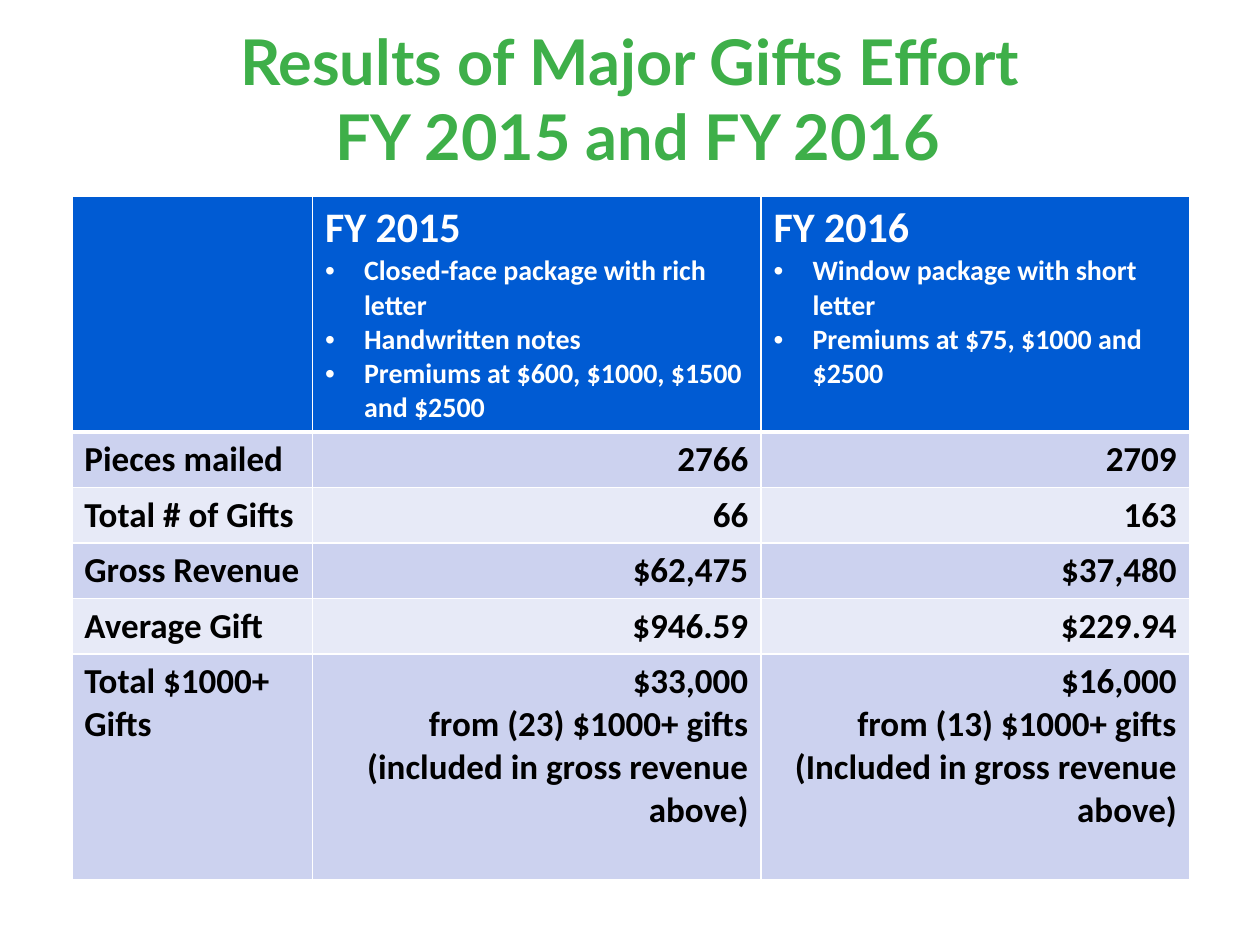
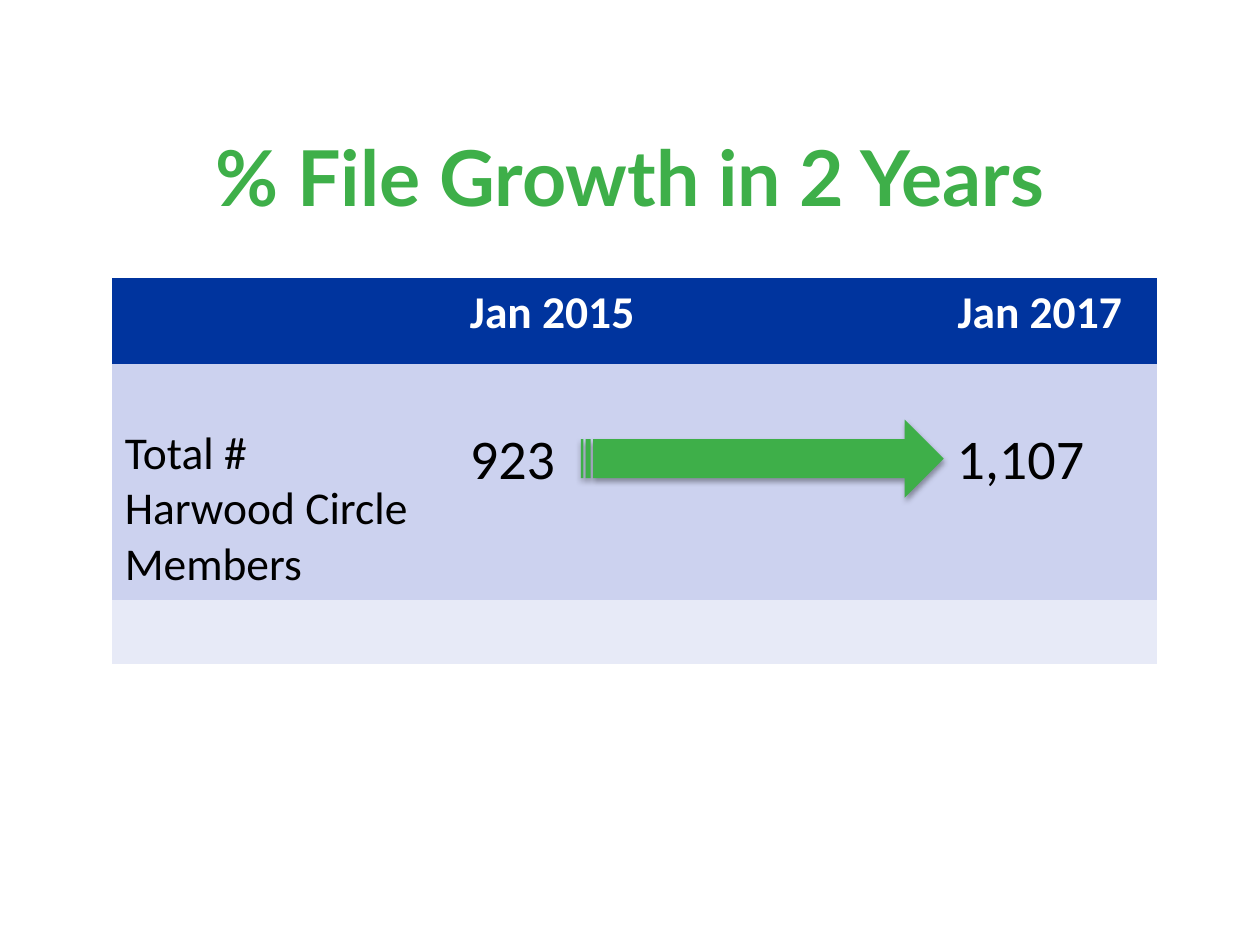
from pptx import Presentation
from pptx.dml.color import RGBColor
from pptx.enum.shapes import MSO_SHAPE
from pptx.enum.text import MSO_ANCHOR, PP_ALIGN
from pptx.oxml.ns import qn
from pptx.util import Inches, Pt
from lxml import etree

LEFT, CENTER, RIGHT = PP_ALIGN.LEFT, PP_ALIGN.CENTER, PP_ALIGN.RIGHT
MIDDLE = MSO_ANCHOR.MIDDLE
STRIPED_ARROW = MSO_SHAPE.STRIPED_RIGHT_ARROW
TITLE_ONLY = 5

# Shared look
GREEN, WHITE, BLACK = "3EAF49", "FFFFFF", "000000"
BRIGHT_BLUE, NAVY = "005BD3", "00349E"
BANDS = ("CCD2EF", "E7EAF7")
TITLE_FONT, BODY_FONT = "Lato", "Calibri"


def rgb(value):
    return RGBColor.from_string(value)


def add_span(para, text, size, color, bold=True, font=BODY_FONT):
    span = para.add_run()
    span.text = text
    span.font.size = Pt(size)
    span.font.name = font
    span.font.bold = bold
    span.font.color.rgb = rgb(color)


def write_cell(cell, lines, size, color, bold=True, align=LEFT):
    """Write one paragraph per line and return the paragraphs."""
    frame = cell.text_frame
    paras = [frame.paragraphs[0]] + [frame.add_paragraph() for _ in lines[1:]]
    for para, line in zip(paras, lines):
        para.alignment = align
        add_span(para, line, size, color, bold)
    return paras


def add_bullet(para, indent=0.31):
    props = para._p.get_or_add_pPr()
    props.set("marL", str(Inches(indent)))
    props.set("indent", str(-Inches(indent)))
    etree.SubElement(props, qn("a:buFont"), typeface="Arial")
    etree.SubElement(props, qn("a:buChar"), char="•")


def set_border(cell, side, width, color):
    """Draw one cell edge; a width of 0 leaves it clear."""
    line = etree.SubElement(cell._tc.get_or_add_tcPr(), qn(f"a:ln{side}"), w=str(Pt(width)))
    if width:
        fill = etree.SubElement(line, qn("a:solidFill"))
        etree.SubElement(fill, qn("a:srgbClr"), val=color)
    else:
        etree.SubElement(line, qn("a:noFill"))


def add_title(page, box, lines, size):
    title = page.shapes.title
    title.left, title.top, title.width, title.height = map(Inches, box)
    title.text_frame.vertical_anchor = MIDDLE
    title.text_frame.word_wrap = True
    para = title.text_frame.paragraphs[0]
    para.alignment = CENTER
    for index, line in enumerate(lines):
        if index:
            para.add_line_break()
        add_span(para, line, size, GREEN, font=TITLE_FONT)


def add_banded_table(page, left, top, widths, heights, header_color, grid=0, header_rule=0):
    """Add a table with a coloured header row over alternating bands."""
    frame = page.shapes.add_table(len(heights), len(widths), Inches(left), Inches(top),
                                  Inches(sum(widths)), Inches(sum(heights)))
    table = frame.table
    table.first_row = table.horz_banding = False
    for column, width in zip(table.columns, widths):
        column.width = Inches(width)
    for index, (row, height) in enumerate(zip(table.rows, heights)):
        row.height = Inches(height)
        edges = {"L": grid, "R": grid,
                 "T": header_rule if index == 1 else grid,
                 "B": header_rule if index == 0 else grid}
        for cell in row.cells:
            for side, width in edges.items():
                set_border(cell, side, width, WHITE)
            cell.fill.solid()
            cell.fill.fore_color.rgb = rgb(BANDS[(index - 1) % 2] if index else header_color)
    return table


# Slide 1: yearly results
YEARS = (
    ("FY 2015", "Closed-face package with rich letter", "Handwritten notes",
     "Premiums at $600, $1000, $1500 and $2500"),
    ("FY 2016", "Window package with short letter", "Premiums at $75, $1000 and $2500"),
)
RESULTS = (
    ("Pieces mailed", ["2766"], ["2709"]),
    ("Total # of Gifts", ["66"], ["163"]),
    ("Gross Revenue", ["$62,475"], ["$37,480"]),
    ("Average Gift", ["$946.59"], ["$229.94"]),
    ("Total $1000+ Gifts",
     ["$33,000", "from (23) $1000+ gifts (included in gross revenue above)"],
     ["$16,000", "from (13) $1000+ gifts (Included in gross revenue above)"]),
)


def add_results_table(page, left, top):
    heights = [1.87] + [0.44] * 4 + [1.79]
    table = add_banded_table(page, left, top, [1.91, 3.56, 3.4], heights,
                             BRIGHT_BLUE, grid=1, header_rule=3)
    for column, (year, *features) in enumerate(YEARS, 1):
        cell = table.cell(0, column)
        write_cell(cell, [year], 24, WHITE)
        for feature in features:
            para = cell.text_frame.add_paragraph()
            add_bullet(para)
            add_span(para, feature, 16, WHITE)
    for row, (label, *values) in enumerate(RESULTS, 1):
        write_cell(table.cell(row, 0), [label], 20, BLACK)
        for column, lines in enumerate(values, 1):
            write_cell(table.cell(row, column), lines, 20, BLACK, align=RIGHT)


def build_results(page):
    add_title(page, (0.5, 0.15, 9, 1.25),
              ["Results of Major Gifts Effort", " FY 2015 and FY 2016"], 36)
    add_results_table(page, 0.57, 1.56)


# Slide 2: member growth
def add_growth_table(page, left, top):
    table = add_banded_table(page, left, top, [2.74, 3.39, 2.16], [0.68, 1.87, 0.51], NAVY)
    write_cell(table.cell(0, 1), ["Jan 2015"], 26, WHITE)
    write_cell(table.cell(0, 2), ["Jan 2017"], 26, WHITE)
    table.cell(0, 2).margin_left = Inches(0.58)
    write_cell(table.cell(1, 0), ["Total #", "Harwood Circle Members"], 26, BLACK, bold=False)
    write_cell(table.cell(1, 1), ["923"], 32, BLACK, bold=False)
    write_cell(table.cell(1, 2), ["1,107"], 32, BLACK, bold=False, align=CENTER)
    for column in range(3):
        table.cell(1, column).margin_top = Inches(0.49)


def add_growth_arrow(page, box):
    arrow = page.shapes.add_shape(STRIPED_ARROW, *map(Inches, box))
    arrow.fill.solid()
    arrow.fill.fore_color.rgb = rgb(GREEN)
    arrow.line.fill.background()
    # Soft shadow straight below
    arrow.shadow.inherit = False
    effects = arrow._element.spPr.find(qn("a:effectLst"))
    shadow = etree.SubElement(effects, qn("a:outerShdw"), blurRad=str(Pt(3.1)),
                              dist=str(Pt(1.8)), dir="5400000", rotWithShape="0")
    tint = etree.SubElement(shadow, qn("a:srgbClr"), val=BLACK)
    etree.SubElement(tint, qn("a:alpha"), val="35000")


def build_growth(page):
    left, top = 0.89, 2.21
    add_title(page, (0.5, 0.45, 9, 1.89), ["% File Growth in 2 Years"], 44)
    add_growth_table(page, left, top)
    add_growth_arrow(page, (left + 3.72, top + 1.12, 2.88, 0.62))


def main():
    deck = Presentation()
    deck.slide_width, deck.slide_height = Inches(10), Inches(7.5)
    for build in (build_results, build_growth):
        build(deck.slides.add_slide(deck.slide_layouts[TITLE_ONLY]))
    deck.save("out.pptx")


if __name__ == "__main__":
    main()
